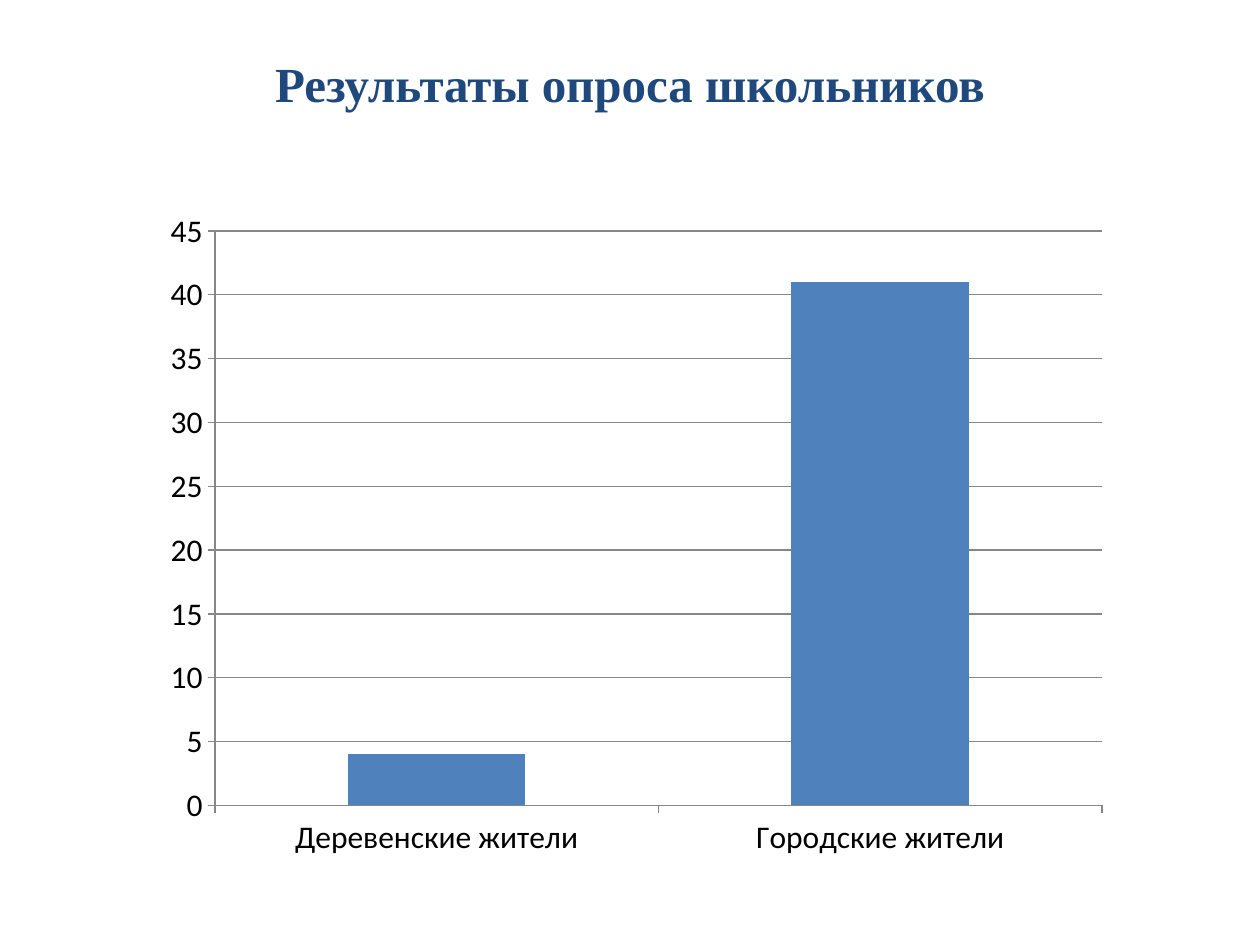
import dataclasses

import pptx
import pptx.chart.data
import pptx.dml.color
import pptx.enum.chart
import pptx.enum.text
import pptx.util


@dataclasses.dataclass(frozen=True)
class Theme:
    title_color: str = "1F497D"
    bar_color: str = "4F81BD"
    line_color: str = "878787"
    text_color: str = "000000"
    title_font: str = "Times New Roman"
    chart_font: str = "Calibri"
    title_size: int = 28
    chart_size: int = 18


class SlideBuilder:
    def __init__(self, prs, theme):
        self.prs = prs
        self.theme = theme
        self.slide = prs.slides.add_slide(prs.slide_layouts[6])

    def box(self, left, top, width, height):
        w, h = self.prs.slide_width, self.prs.slide_height
        return int(left * w), int(top * h), int(width * w), int(height * h)

    def set_font(self, font, name, size, color):
        font.name = name
        font.size = pptx.util.Pt(size)
        font.color.rgb = pptx.dml.color.RGBColor.from_string(color)

    def set_line(self, line):
        line.color.rgb = pptx.dml.color.RGBColor.from_string(self.theme.line_color)
        line.width = pptx.util.Pt(0.75)

    def title(self, text, *share):
        tf = self.slide.shapes.add_textbox(*self.box(*share)).text_frame
        tf.word_wrap = True
        tf.auto_size = pptx.enum.text.MSO_AUTO_SIZE.SHAPE_TO_FIT_TEXT
        tf.text = text
        p = tf.paragraphs[0]
        p.alignment = pptx.enum.text.PP_ALIGN.CENTER
        font = p.runs[0].font
        self.set_font(font, self.theme.title_font, self.theme.title_size, self.theme.title_color)
        font.bold = True

    def column_chart(self, values, maximum, step, *share):
        data = pptx.chart.data.CategoryChartData()
        data.categories = list(values)
        data.add_series("Series 1", list(values.values()))
        kind = pptx.enum.chart.XL_CHART_TYPE.COLUMN_CLUSTERED
        chart = self.slide.shapes.add_chart(kind, *self.box(*share), data).chart
        chart.has_legend = False
        chart.has_title = False
        self.set_font(chart.font, self.theme.chart_font, self.theme.chart_size, self.theme.text_color)

        plot = chart.plots[0]
        plot.gap_width = 150
        plot.vary_by_categories = False
        fill = plot.series[0].format.fill
        fill.solid()
        fill.fore_color.rgb = pptx.dml.color.RGBColor.from_string(self.theme.bar_color)

        for axis in (chart.category_axis, chart.value_axis):
            axis.major_tick_mark = pptx.enum.chart.XL_TICK_MARK.OUTSIDE
            axis.minor_tick_mark = pptx.enum.chart.XL_TICK_MARK.NONE
            self.set_line(axis.format.line)
        axis = chart.value_axis
        axis.minimum_scale = 0
        axis.maximum_scale = maximum
        axis.major_unit = step
        axis.has_major_gridlines = True
        self.set_line(axis.major_gridlines.format.line)


def main():
    prs = pptx.Presentation()
    prs.slide_width = pptx.util.Inches(10)
    prs.slide_height = pptx.util.Inches(7.5)
    s = SlideBuilder(prs, Theme())
    answers = {"Деревенские жители": 4, "Городские жители": 41}
    s.column_chart(answers, 45, 5, 0.12, 0.21, 0.77, 0.71)
    s.title("Результаты опроса школьников", 0.03, 0.05, 0.94, 0.08)
    prs.save("out.pptx")


if __name__ == "__main__":
    main()
